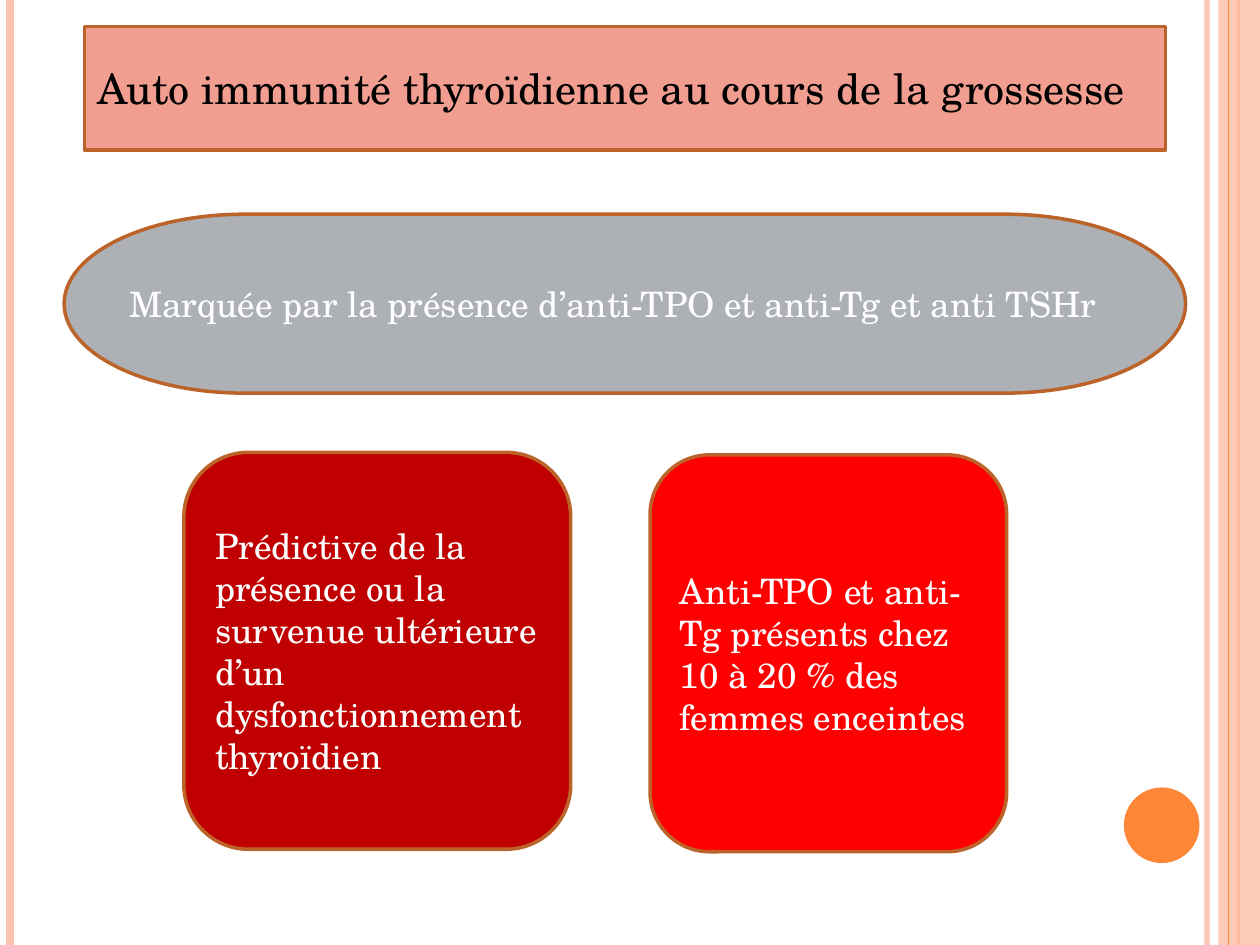
from lxml import etree
from pptx import Presentation
from pptx.dml.color import RGBColor
from pptx.enum.shapes import MSO_CONNECTOR, MSO_SHAPE
from pptx.enum.text import MSO_ANCHOR, MSO_AUTO_SIZE, PP_ALIGN
from pptx.oxml.ns import qn
from pptx.util import Inches, Pt

STRAIGHT = MSO_CONNECTOR.STRAIGHT
RECTANGLE = MSO_SHAPE.RECTANGLE
OVAL = MSO_SHAPE.OVAL
ROUNDED = MSO_SHAPE.ROUNDED_RECTANGLE
TERMINATOR = MSO_SHAPE.FLOWCHART_TERMINATOR
MIDDLE = MSO_ANCHOR.MIDDLE
NO_AUTOFIT = MSO_AUTO_SIZE.NONE
LEFT = PP_ALIGN.LEFT

TITLE_ONLY = 5
FONT = "TeX Gyre Schola"
COLORS = {
    "peach": "FEC3AE",
    "orange": "FE8637",
    "outline": "BC6329",
    "salmon": "F19E91",
    "gray": "ADB0B5",
    "dark_red": "C00000",
    "red": "FF0000",
    "black": "000000",
    "white": "FFFFFF",
}


def rgb(name):
    """Return the named palette colour."""
    return RGBColor.from_string(COLORS[name])


def paint(fill, color, opacity=100):
    """Apply a solid colour with an opacity in percent."""
    fill.solid()
    fill.fore_color.rgb = rgb(color)
    if opacity < 100:
        color_element = fill._xPr.find(qn("a:solidFill"))[0]
        etree.SubElement(color_element, qn("a:alpha"), val=str(opacity * 1000))


def add_stripe(slide, x, color, width, opacity=100):
    """Draw a full-height vertical line."""
    stripe = slide.shapes.add_connector(
        STRAIGHT, Inches(x), Inches(0), Inches(x), Inches(7.5))
    stripe.line.width = Pt(width)
    paint(stripe.line.fill, color, opacity)
    etree.SubElement(stripe._element.spPr, qn("a:effectLst"))


def add_panel(slide, kind, box, color, opacity=100):
    """Add a filled shape without outline or shadow."""
    panel = slide.shapes.add_shape(kind, *map(Inches, box))
    panel.shadow.inherit = False
    paint(panel.fill, color, opacity)
    panel.line.fill.background()
    return panel


def set_outline(shape):
    """Give a shape the common brown outline."""
    paint(shape.line.fill, "outline")
    shape.line.width = Pt(2)


def write_text(shape, text, size=20, color="white", space_before=0):
    """Write left-aligned, vertically centred text into a shape."""
    frame = shape.text_frame
    frame.word_wrap = True
    frame.auto_size = NO_AUTOFIT
    frame.vertical_anchor = MIDDLE
    paragraph = frame.paragraphs[0]
    paragraph.alignment = LEFT
    paragraph.space_before = Pt(space_before)
    run = paragraph.add_run()
    run.text = text
    run.font.name = FONT
    run.font.size = Pt(size)
    run.font.color.rgb = rgb(color)


def add_message(slide, kind, box, color, text):
    """Add an outlined shape holding a statement."""
    message = add_panel(slide, kind, box, color)
    set_outline(message)
    write_text(message, text)


def add_title(slide, box, text):
    """Turn the title placeholder into a rounded banner."""
    title = slide.shapes.title
    title.left, title.top, title.width, title.height = map(Inches, box)
    geometry = etree.SubElement(
        title._element.spPr, qn("a:prstGeom"), prst="roundRect")
    etree.SubElement(geometry, qn("a:avLst"))
    paint(title.fill, "salmon")
    set_outline(title)
    write_text(title, text, size=24, color="black", space_before=6)


def add_decor(slide):
    """Draw the side stripes, the band and the dot."""
    add_stripe(slide, 9.58, "peach", 3, opacity=93)
    add_stripe(slide, 0.08, "peach", 4.5)
    add_stripe(slide, 9.83, "orange", 1.5)
    add_panel(slide, RECTANGLE, (9.67, 0, 0.33, 7.5), "peach", opacity=87)
    add_stripe(slide, 9.75, "orange", 0.75)
    add_panel(slide, OVAL, (8.92, 6.25, 0.6, 0.6), "orange")


def main():
    """Build and save the slide."""
    deck = Presentation()
    deck.slide_width, deck.slide_height = Inches(10), Inches(7.5)
    slide = deck.slides.add_slide(deck.slide_layouts[TITLE_ONLY])
    add_decor(slide)
    add_title(slide, (0.67, 0.21, 8.58, 0.98),
              "Auto immunité thyroïdienne au cours de la grossesse")
    add_message(slide, TERMINATOR, (0.51, 1.7, 8.9, 1.42), "gray",
                "Marquée par la présence d’anti-TPO et anti-Tg et anti TSHr")
    add_message(slide, ROUNDED, (1.46, 3.59, 3.07, 3.15), "dark_red",
                "Prédictive de la présence ou la survenue ultérieure d’un "
                "dysfonctionnement thyroïdien")
    add_message(slide, ROUNDED, (5.16, 3.61, 2.83, 3.15), "red",
                "Anti-TPO et anti-Tg présents chez 10 à 20 % des "
                "femmes enceintes")
    deck.save("out.pptx")


if __name__ == "__main__":
    main()
